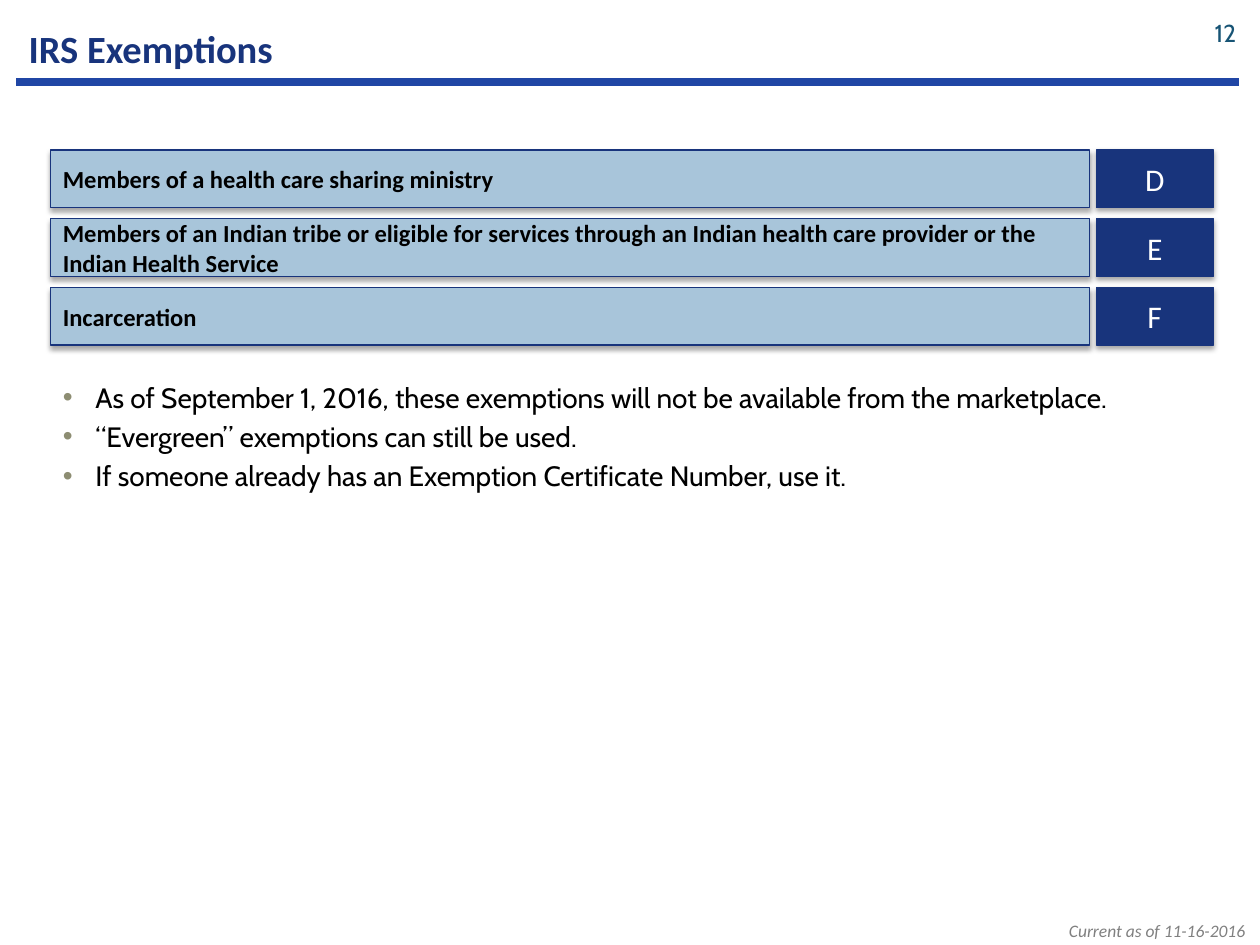
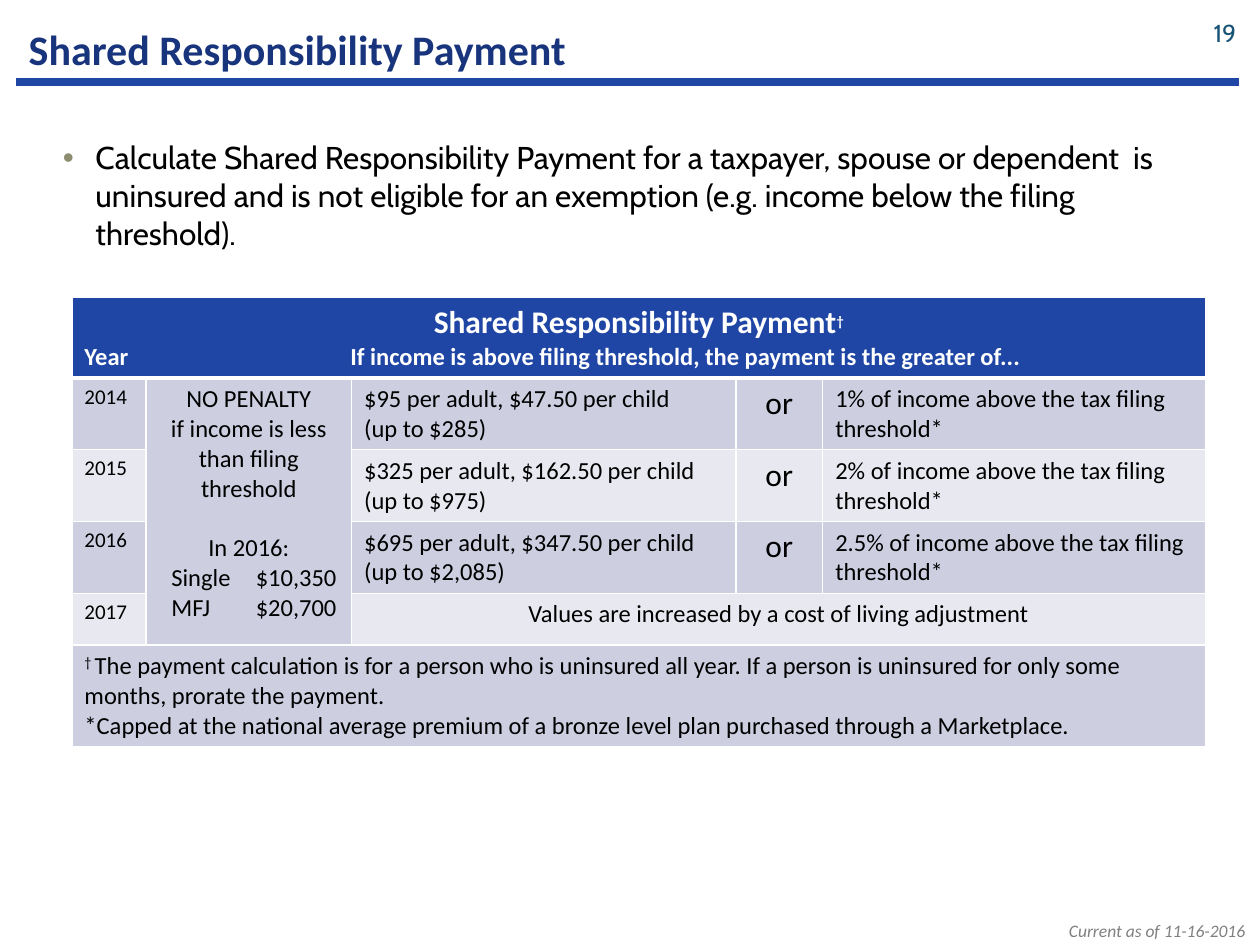
from lxml import etree
from pptx import Presentation
from pptx.dml.color import RGBColor
from pptx.enum.shapes import MSO_CONNECTOR, MSO_SHAPE
from pptx.enum.text import MSO_ANCHOR, PP_ALIGN
from pptx.oxml import parse_xml
from pptx.oxml.ns import nsdecls, qn
from pptx.util import Inches, Pt

LEFT, CENTER, RIGHT = PP_ALIGN.LEFT, PP_ALIGN.CENTER, PP_ALIGN.RIGHT
TOP, MIDDLE = MSO_ANCHOR.TOP, MSO_ANCHOR.MIDDLE
RECT, LINE = MSO_SHAPE.RECTANGLE, MSO_CONNECTOR.STRAIGHT

NAVY, BLUE, PALE = "18347C", "2046A5", "A8C5DA"
BLACK, WHITE, GRAY, TEAL, OLIVE = "000000", "FFFFFF", "808080", "175475", "8D8D72"
BANDS = ("CDCFE1", "E8E9F0")
SANS, BODY = "Calibri", "Cabin"


def color(code):
    return RGBColor.from_string(code)


def xml(tag, body="", attrs=""):
    return parse_xml(f"<a:{tag} {nsdecls('a')} {attrs}>{body}</a:{tag}>")


def ink(code):
    return f'<a:solidFill><a:srgbClr val="{code}"/></a:solidFill>'


class Deck:
    """Holds the shared style and the slide being built."""

    def __init__(self):
        self.prs = Presentation()
        self.prs.slide_width, self.prs.slide_height = Inches(10), Inches(7.5)
        self.slide = None

    def style(self, run, size, code=BLACK, font=SANS, bold=False, italic=False):
        run.font.size, run.font.name = Pt(size), font
        run.font.bold, run.font.italic = bold, italic
        run.font.color.rgb = color(code)

    def label(self, frame, text, size, align=LEFT, **look):
        frame.word_wrap = True
        frame.text = text
        for para in frame.paragraphs:
            para.alignment = align
            for run in para.runs:
                self.style(run, size, **look)

    def text(self, x, y, w, h, text, size, align=LEFT, anchor=TOP, **look):
        box = self.slide.shapes.add_textbox(Inches(x), Inches(y), Inches(w), Inches(h))
        self.label(box.text_frame, text, size, align, **look)
        box.text_frame.vertical_anchor = anchor
        return box.text_frame

    def page(self, title, size, number):
        self.slide = self.prs.slides.add_slide(self.prs.slide_layouts[6])
        self.text(5.97, 7.25, 4.01, 0.27, "Current as of 11-16-2016", 10, RIGHT,
                  code=GRAY, italic=True)
        rule = self.slide.shapes.add_connector(
            LINE, Inches(0.13), Inches(0.65), Inches(9.83), Inches(0.65))
        rule.line.color.rgb, rule.line.width = color(BLUE), Pt(4.75)
        etree.SubElement(rule._element.spPr, qn("a:effectLst"))
        self.text(0.13, 0.1, 9, 0.57, title, size, anchor=MIDDLE, code=NAVY, bold=True)
        self.text(9.4, 0.06, 0.51, 0.4, str(number), 14, RIGHT, MIDDLE,
                  code=TEAL, font=BODY)

    def bullets(self, y, h, lines, size):
        frame = self.text(0.4, y, 9, h, "\n".join(lines), size, font=BODY)
        for i, para in enumerate(frame.paragraphs):
            props = para._p.get_or_add_pPr()
            props.set("marL", str(Inches(0.26)))
            props.set("indent", str(-Inches(0.26)))
            props.append(xml("buClr", f'<a:srgbClr val="{OLIVE}"/>'))
            props.append(xml("buFont", attrs='typeface="Arial"'))
            props.append(xml("buChar", attrs='char="•"'))
            if i:
                para.space_before = Pt(0.2 * size)

    def bar(self, x, y, w, fill, text, size, align=LEFT, **look):
        box = self.slide.shapes.add_shape(
            RECT, Inches(x), Inches(y), Inches(w), Inches(0.46))
        box.fill.solid()
        box.fill.fore_color.rgb = color(fill)
        box.line.color.rgb, box.line.width = color(NAVY), Pt(0.75)
        box.shadow.inherit = False
        box._element.spPr.find(qn("a:effectLst")).append(xml(
            "outerShdw",
            f'<a:srgbClr val="{BLACK}"><a:alpha val="35000"/></a:srgbClr>',
            f'blurRad="{Pt(3.1)}" dist="{Pt(1.8)}" dir="5400000" rotWithShape="0"'))
        self.label(box.text_frame, text, size, align, **look)
        box.text_frame.vertical_anchor = MIDDLE

    def table(self, x, y, cols, rows):
        grid = self.slide.shapes.add_table(
            len(rows), len(cols), Inches(x), Inches(y),
            Inches(sum(cols)), Inches(sum(rows))).table
        grid.first_row = grid.horz_banding = False
        for col, width in zip(grid.columns, cols):
            col.width = Inches(width)
        for i, height in enumerate(rows):
            grid.rows[i].height = Inches(height)
            for cell in grid.rows[i].cells:
                props = cell._tc.get_or_add_tcPr()
                for side in "LRTB":
                    thick = (i, side) in ((0, "B"), (1, "T"))
                    props.append(xml("ln" + side, ink(WHITE),
                                     f'w="{Pt(3 if thick else 1)}"'))
                cell.fill.solid()
                cell.fill.fore_color.rgb = color(BANDS[(i - 1) % 2] if i else BLUE)
        return grid

    def tab(self, para, stop, indent=0):
        props = para._p.get_or_add_pPr()
        props.set("marL", str(Inches(indent)))
        props.append(xml("tabLst", f'<a:tab pos="{Inches(stop)}" algn="l"/>'))

    def raised(self, run):
        run._r.get_or_add_rPr().set("baseline", "30000")


def exempt(deck):
    deck.page("IRS Exemptions", 22, 12)
    # Exemption bars with their codes
    kinds = (
        ("Members of a health care sharing ministry", "D"),
        ("Members of an Indian tribe or eligible for services through an Indian "
         "health care provider or the Indian Health Service", "E"),
        ("Incarceration", "F"),
    )
    for i, (name, code) in enumerate(kinds):
        top = 1.19 + i * 1.09 / 2
        deck.bar(0.4, top, 8.25, PALE, name, 14, bold=True)
        deck.bar(8.7, top, 0.93, NAVY, code, 18, CENTER, code=WHITE)
    deck.bullets(2.97, 3.39, (
        "As of September 1, 2016, these exemptions will not be available "
        "from the marketplace.",
        "“Evergreen” exemptions can still be used.",
        "If someone already has an Exemption Certificate Number, use it.",
    ), 16)


def payment(deck):
    deck.page("Shared Responsibility Payment", 24, 19)
    deck.bullets(1.05, 1.2, (
        "Calculate Shared Responsibility Payment for a taxpayer, spouse or dependent  is "
        "uninsured and is not eligible for an exemption (e.g. income below the filing "
        "threshold).",), 18)
    grid = deck.table(0.57, 2.36, (0.59, 1.63, 3.05, 0.69, 3.04),
                      (0.64, 0.57, 0.57, 0.57, 0.41, 0.81))
    for first, last in (((0, 0), (0, 4)), ((1, 1), (4, 1)),
                        ((4, 2), (4, 4)), ((5, 0), (5, 4))):
        grid.cell(*first).merge(grid.cell(*last))

    def fill(row, col, text, size=14, align=LEFT, **look):
        frame = grid.cell(row, col).text_frame
        deck.label(frame, text, size, align, **look)
        return frame.paragraphs

    # Heading
    head, sub = fill(0, 0, "Shared Responsibility Payment\nYear\tIf income is above filing "
                     "threshold, the payment is the greater of...", code=WHITE, bold=True)
    head.alignment = CENTER
    head.runs[0].font.size = Pt(18)
    mark = head.add_run()
    mark.text = "†"
    deck.style(mark, 14, WHITE, bold=True)
    deck.raised(mark)
    deck.tab(sub, 2.11)

    # Years and amounts
    years = (
        ("2014", "$95 per adult, $47.50 per child\n(up to $285)", "1%"),
        ("2015", "$325 per adult, $162.50 per child (up to $975)", "2%"),
        ("2016", "$695 per adult, $347.50 per child (up to $2,085)", "2.5%"),
    )
    for i, (year, flat, share) in enumerate(years, 1):
        fill(i, 0, year, 12)
        fill(i, 2, flat)
        fill(i, 3, "or", 18, CENTER)
        fill(i, 4, f"{share} of income above the tax filing threshold*")
    fill(4, 0, "2017", 12)
    fill(4, 2, "Values are increased by a cost of living adjustment", align=CENTER)

    # Filing thresholds
    paras = fill(1, 1, "NO PENALTY\nif income is less than filing threshold\nIn 2016:\n"
                 "Single\t$10,350\nMFJ\t$20,700", align=CENTER)
    paras[2].space_before = Pt(17)
    for para in paras[3:]:
        para.alignment = LEFT
        deck.tab(para, 0.67, 0.1)

    # Footnotes
    note = fill(5, 0, "† \n*Capped at the national average premium of a bronze level plan "
                "purchased through a Marketplace.")[0]
    deck.raised(note.runs[0])
    rest = note.add_run()
    rest.text = ("The payment calculation is for a person who is uninsured all year. If a "
                 "person is uninsured for only some months, prorate the payment.")
    deck.style(rest, 14)


def main():
    deck = Deck()
    exempt(deck)
    payment(deck)
    deck.prs.save("out.pptx")


if __name__ == "__main__":
    main()
